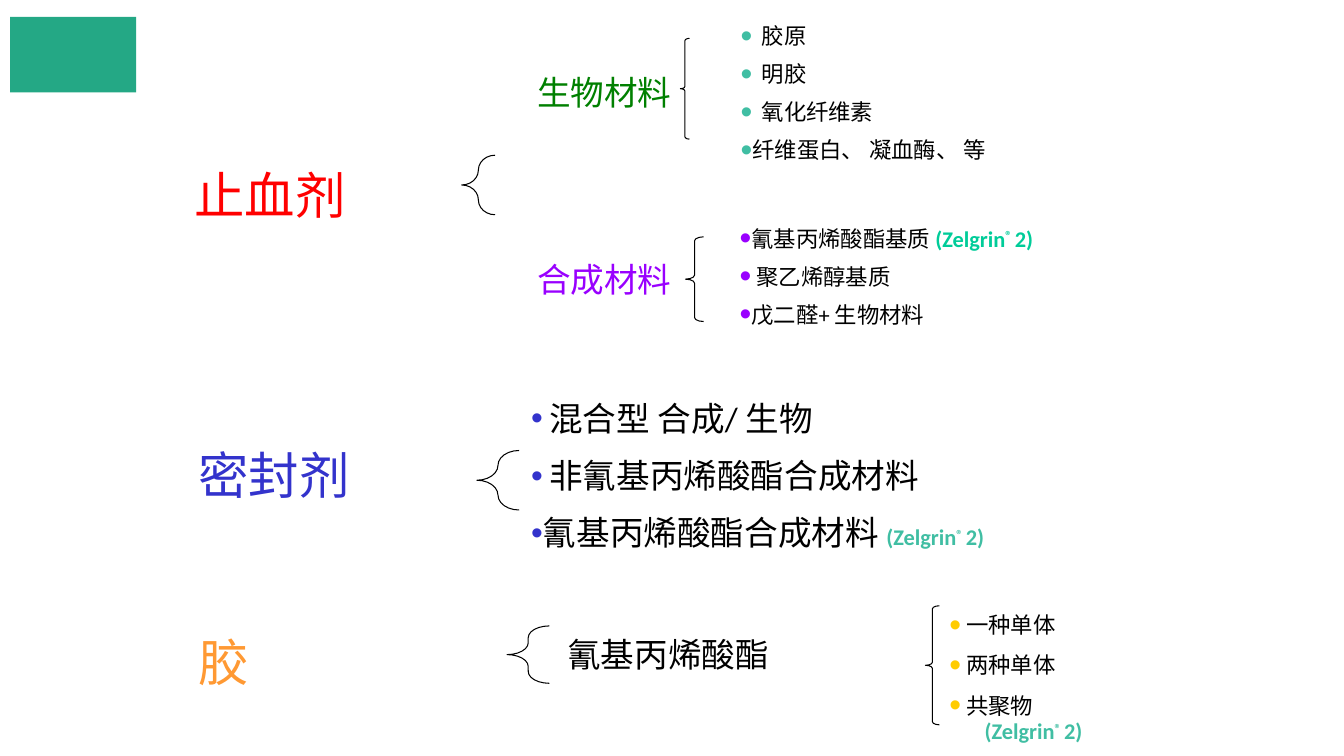
from lxml import etree
from pptx import Presentation
from pptx.dml.color import RGBColor
from pptx.enum import shapes, text
from pptx.oxml import ns
from pptx.util import Pt

BLACK = RGBColor(0x00, 0x00, 0x00)
RED = RGBColor(0xFF, 0x00, 0x00)
GREEN = RGBColor(0x00, 0x80, 0x00)
BLUE = RGBColor(0x33, 0x33, 0xCC)
ORANGE = RGBColor(0xFF, 0x99, 0x33)
PURPLE = RGBColor(0x99, 0x00, 0xFF)
YELLOW = RGBColor(0xFF, 0xCC, 0x00)
MINT = RGBColor(0x00, 0xCC, 0x99)
TEAL = RGBColor(0x40, 0xBE, 0xA3)
CORNER_GREEN = RGBColor(0x24, 0xA8, 0x85)


def write(shape, box, lines, size, color, product_color=TEAL, line_spacing=None):
    """Place a shape and fill it; '|' in a line marks where the product name follows."""
    shape.left, shape.top, shape.width, shape.height = map(Pt, box)
    frame = shape.text_frame
    formats = {"word_wrap": True, "auto_size": text.MSO_AUTO_SIZE.NONE,
               "vertical_anchor": text.MSO_ANCHOR.TOP}
    for name, value in formats.items():
        setattr(frame, name, value)
    for index, line in enumerate(lines):
        paragraph = frame.paragraphs[0] if index == 0 else frame.add_paragraph()
        paragraph.alignment = text.PP_ALIGN.LEFT
        paragraph.space_before = Pt(size / 2 if index and not line_spacing else 0)
        paragraph.line_spacing = line_spacing
        label, marker, _ = line.partition("|")
        pieces = [(label, size, color, False, 0)] if label else []
        if marker:
            pieces += [(part, 16, product_color, True, raised)
                       for part, raised in (("(Zelgrin", 0), ("® ", 30000), ("2)", 0))]
        for words, points, tint, bold, raised in pieces:
            run = paragraph.add_run()
            run.text = words
            run.font.color.rgb = tint
            for name, value in {"name": "Calibri", "size": Pt(points), "bold": bold}.items():
                setattr(run.font, name, value)
            if raised:
                run.font._element.set("baseline", str(raised))


def add_bullets(shape, color, percent, indents):
    for paragraph, indent in zip(shape.text_frame.paragraphs, indents):
        properties = paragraph._p.get_or_add_pPr()
        properties.set("marL", str(Pt(indent)))
        properties.set("indent", str(-Pt(indent)))
        bullet_color = etree.SubElement(properties, ns.qn("a:buClr"))
        etree.SubElement(bullet_color, ns.qn("a:srgbClr"), val=str(color))
        etree.SubElement(properties, ns.qn("a:buSzPct"), val=str(percent * 1000))
        etree.SubElement(properties, ns.qn("a:buFont"), typeface="Arial")
        etree.SubElement(properties, ns.qn("a:buChar"), char="•")


presentation = Presentation()
presentation.slide_width, presentation.slide_height = Pt(960), Pt(540)
slide = presentation.slides.add_slide(presentation.slide_layouts[1])
title, sealants = slide.placeholders
title.element.getparent().remove(title.element)

# Plain corner block
corner = slide.shapes.add_shape(shapes.MSO_SHAPE.RECTANGLE, Pt(7.2), Pt(12), Pt(90), Pt(54))
corner.shadow.inherit = False
corner.fill.solid()
corner.fill.fore_color.rgb = CORNER_GREEN
corner.line.fill.background()

# Categories and material groups
labels = [
    ("止血剂", 36, RED, (131.8, 113.8, 124, 51)),
    ("密封剂", 36, BLUE, (134.6, 314, 124, 51)),
    ("胶", 36, ORANGE, (134.6, 447, 51, 51)),
    ("生物材料", 24, GREEN, (376.6, 48.2, 112, 36)),
    ("合成材料", 24, PURPLE, (376.6, 181.4, 112, 36)),
    ("氰基丙烯酸酯", 24, BLACK, (398.2, 449.3, 456, 36)),
    ("|", 16, TEAL, (696.2, 509, 107.3, 26.6)),
]
for label, size, color, box in labels:
    write(slide.shapes.add_textbox(0, 0, 0, 0), box, [label], size, color)

# Bulleted lists
write(sealants, (372.2, 280.8, 408, 152.6),
      ["混合型 合成/ 生物", "非氰基丙烯酸酯合成材料", "氰基丙烯酸酯合成材料 |"], 24, BLACK)
add_bullets(sealants, BLUE, 100, [13, 13, 8])

lists = [
    (["胶原", "明胶", "氧化纤维素", "纤维蛋白、 凝血酶、 等"],
     (522, 12.2, 221.8, 113.8), TEAL, [15, 15, 15, 8.5], None),
    (["氰基丙烯酸酯基质 |", "聚乙烯醇基质", "戊二醛+ 生物材料"],
     (521.3, 157, 239.8, 85), PURPLE, [8.5, 12, 8.5], None),
    (["一种单体", "两种单体", "共聚物"],
     (671, 423.4, 95, 94.3), YELLOW, [12, 12, 12], 1.5),
]
for items, box, bullet_color, indents, line_spacing in lists:
    listing = slide.shapes.add_textbox(0, 0, 0, 0)
    write(listing, box, items, 16, BLACK, MINT, line_spacing)
    add_bullets(listing, bullet_color, 150, indents)

# Braces: left, top, width, height, curvature
braces = [
    (329.8, 110.9, 23.8, 42.5, 0.67),
    (340.6, 321.8, 30.2, 42.5, 0.39),
    (362.2, 447.1, 30.2, 41, 0.28),
    (486, 27.4, 6.5, 72, 0.26),
    (489.6, 169.2, 13, 60.5, 0.22),
    (661, 432.7, 10, 85, 0.22),
]
for left, top, width, height, curvature in braces:
    brace = slide.shapes.add_shape(
        shapes.MSO_SHAPE.LEFT_BRACE, Pt(left), Pt(top), Pt(width), Pt(height))
    brace.adjustments[0] = curvature
    brace.shadow.inherit = False
    brace.fill.background()
    brace.line.color.rgb = BLACK
    brace.line.width = Pt(0.75)

presentation.save("out.pptx")
